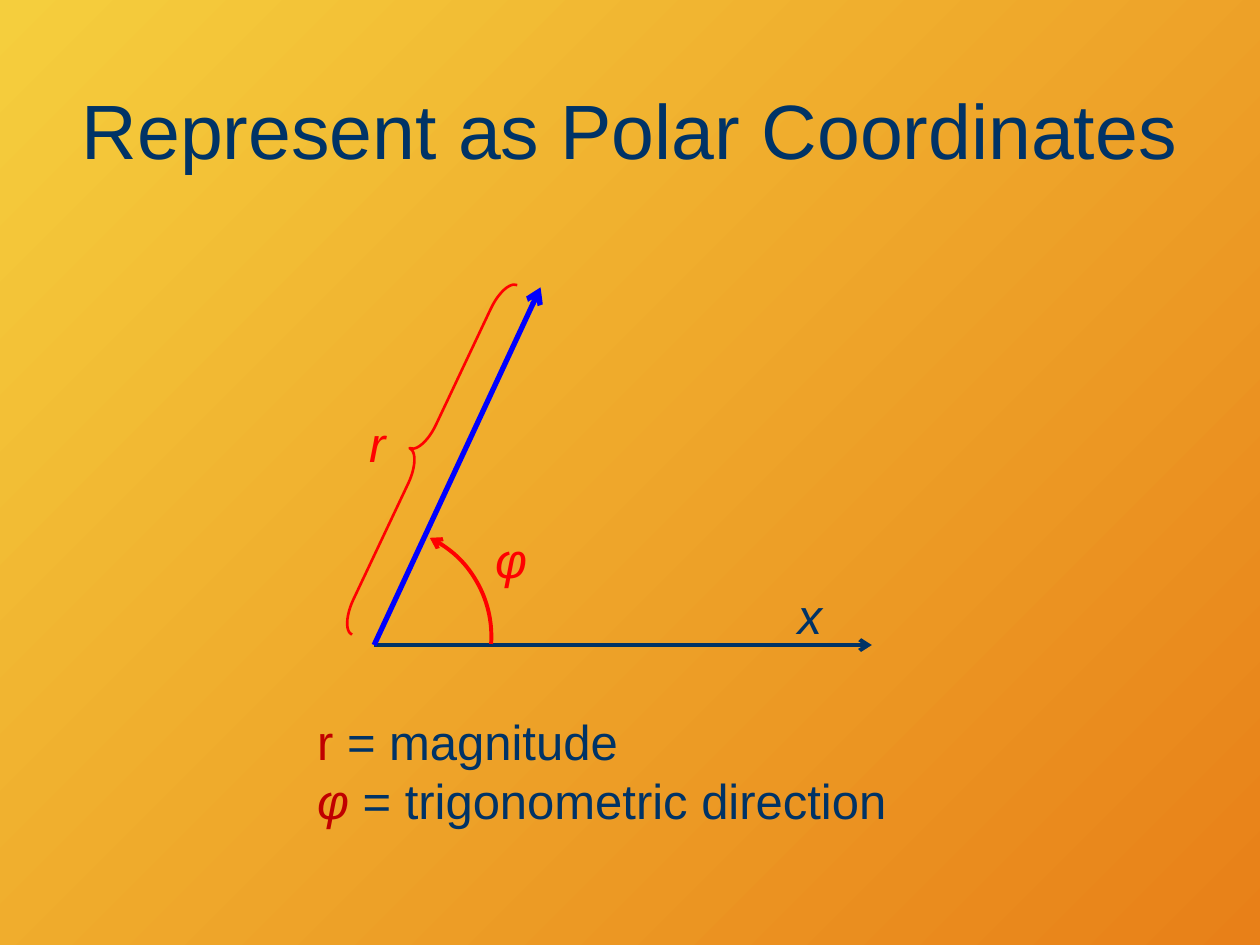
import pptx
import pptx.dml.color
import pptx.enum.shapes
import pptx.enum.text
import pptx.oxml
import pptx.oxml.ns
import pptx.util

Pt = pptx.util.Pt
SHAPES = pptx.enum.shapes.MSO_SHAPE
COLORS = {
    "yellow": "F5CE3D",
    "orange": "E88018",
    "navy": "003366",
    "blue": "0000FF",
    "red": "FF0000",
    "dark_red": "C00000",
}
FULL_TURN = 360
ANGLE_UNIT = 0.6


def rgb(name):
    """Return the named colour."""
    return pptx.dml.color.RGBColor.from_string(COLORS[name])


def style_line(line, color, width):
    """Set the colour and width of a line."""
    line.color.rgb = rgb(color)
    line.width = Pt(width)


def add_arrowhead(shape, end):
    """Put an open arrowhead on the headEnd or tailEnd of a shape's line."""
    head = pptx.oxml.parse_xml(
        f'<a:{end} {pptx.oxml.ns.nsdecls("a")} type="arrow"/>')
    shape._element.spPr.get_or_add_ln().append(head)


def add_run(paragraph, text, color, size=28, italic=False):
    """Append a formatted run to a paragraph."""
    run = paragraph.add_run()
    run.text = text
    run.font.color.rgb = rgb(color)
    formats = {"name": "Arial", "size": Pt(size), "italic": italic}
    for attribute, value in formats.items():
        setattr(run.font, attribute, value)


def add_text(slide, box, lines, wrap=True, inset=True):
    """Add a text box whose lines are lists of (text, color, italic)."""
    frame = slide.shapes.add_textbox(*map(Pt, box)).text_frame
    formats = {"word_wrap": wrap,
               "auto_size": pptx.enum.text.MSO_AUTO_SIZE.SHAPE_TO_FIT_TEXT}
    if not inset:
        formats |= {f"margin_{side}": 0
                    for side in ("left", "top", "right", "bottom")}
    for attribute, value in formats.items():
        setattr(frame, attribute, value)
    for index, runs in enumerate(lines):
        paragraph = frame.add_paragraph() if index else frame.paragraphs[0]
        for text, color, italic in runs:
            add_run(paragraph, text, color, italic=italic)


def add_arrow(slide, start, end, color, width):
    """Add a straight arrow without a shadow."""
    arrow = slide.shapes.add_connector(
        pptx.enum.shapes.MSO_CONNECTOR.STRAIGHT, *map(Pt, start + end))
    style_line(arrow.line, color, width)
    add_arrowhead(arrow, "tailEnd")
    arrow._element.spPr.append(
        pptx.oxml.parse_xml(f'<a:effectLst {pptx.oxml.ns.nsdecls("a")}/>'))


def add_outline(slide, preset, box, adjustments, width):
    """Add an unfilled red preset shape and return it."""
    shape = slide.shapes.add_shape(preset, *map(Pt, box))
    shape.shadow.inherit = False
    shape.fill.background()
    style_line(shape.line, "red", width)
    for index, value in enumerate(adjustments):
        shape.adjustments[index] = value
    return shape


def fill_background(slide):
    """Fill the slide with a diagonal gradient."""
    fill = slide.background.fill
    fill.gradient()
    fill.gradient_angle = 315
    for stop, position, color in zip(
            fill.gradient_stops, (0, 1), ("yellow", "orange")):
        stop.position = position
        stop.color.rgb = rgb(color)


def place_title(slide, box, text):
    """Move the title placeholder into the box and format it."""
    title = slide.shapes.title
    for attribute, value in zip(("left", "top", "width", "height"), box):
        setattr(title, attribute, Pt(value))
    frame = title.text_frame
    frame.vertical_anchor = pptx.enum.text.MSO_ANCHOR.MIDDLE
    heading = frame.paragraphs[0]
    heading.alignment = pptx.enum.text.PP_ALIGN.CENTER
    add_run(heading, text, "navy", size=44)


def draw_polar_diagram(slide, left, top):
    """Draw the axis, vector, angle and magnitude from the top left corner."""
    origin = (left + 13.8, top + 223.6)
    add_arrow(slide, origin, (left + 298.2, origin[1]), "navy", 2.25)
    add_text(slide, (left + 255.8, top + 189.8, 24.5, 33.8),
             [[("x", "navy", True)]], inset=False)

    radius, first_angle, last_angle = 62.6, FULL_TURN - 64, 4
    center = (left + 18.2, top + 218.6)
    angle_arc = add_outline(
        slide, SHAPES.ARC,
        (center[0] - radius, center[1] - radius, 2 * radius, 2 * radius),
        (first_angle * ANGLE_UNIT, last_angle * ANGLE_UNIT), 2.25)
    add_arrowhead(angle_arc, "headEnd")
    add_text(slide, (left + 75.8, top + 153.8, 28.8, 41),
             [[("φ", "red", True)]])

    add_arrow(slide, origin, (left + 108.9, top + 19.2), "blue", 3)
    brace = add_outline(slide, SHAPES.LEFT_BRACE,
                        (left + 33.3, top + 4, 15.8, 221), (1.17, 0.5), 1.5)
    brace.rotation = 25.3
    add_text(slide, (left + 3.8, top + 87.6, 23.8, 41),
             [[("r", "red", True)]], wrap=False)


def write_legend(slide, box):
    """Explain the two polar coordinates."""
    add_text(slide, box, [
        [("r", "dark_red", False), (" = magnitude", "navy", False)],
        [("φ", "dark_red", True),
         (" = trigonometric direction", "navy", False)],
    ], wrap=False)


def main():
    """Build and save the slide."""
    deck = pptx.Presentation()
    deck.slide_width, deck.slide_height = Pt(720), Pt(540)
    slide = deck.slides.add_slide(deck.slide_layouts.get_by_name("Title Only"))
    fill_background(slide)
    place_title(slide, (36, 21.6, 648, 104.4), "Represent as Polar Coordinates")
    draw_polar_diagram(slide, 200, 145)
    write_legend(slide, (174.2, 403.2, 340.6, 74.9))
    deck.save("out.pptx")


if __name__ == "__main__":
    main()
